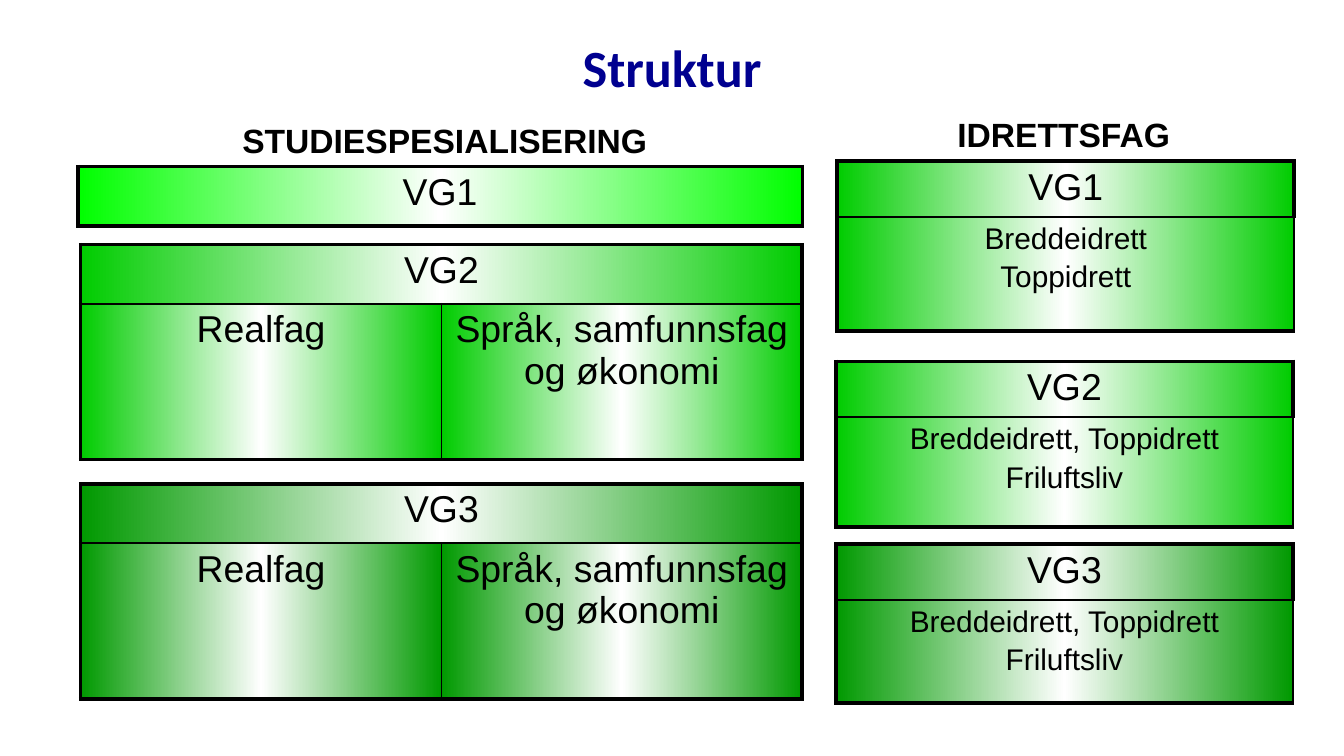
from pptx import Presentation
from pptx import util as u
from pptx.dml.color import RGBColor
from pptx.enum import text
from pptx.oxml import parse_xml
from pptx.oxml.ns import nsdecls

BLACK = RGBColor(0x00, 0x00, 0x00)
NAVY = RGBColor(0x00, 0x00, 0x90)
WHITE = RGBColor(0xFF, 0xFF, 0xFF)
LIME = RGBColor(0x00, 0xFF, 0x00)
GREEN = RGBColor(0x00, 0xCC, 0x00)
DARK_GREEN = RGBColor(0x00, 0x99, 0x00)
THICK, THIN = 2.25, 1
SUBJECTS = ["Realfag", "Språk, samfunnsfag og økonomi"]
SPORTS = ["Breddeidrett, Toppidrett\nFriluftsliv"]


def write(frame, words, size=20, font="Arial", color=BLACK, bold=False, gap=3):
    for index, line in enumerate(words.split("\n")):
        paragraph = frame.paragraphs[0] if index == 0 else frame.add_paragraph()
        paragraph.alignment = text.PP_ALIGN.CENTER
        if index:
            paragraph.space_before = u.Pt(gap)
        run = paragraph.add_run()
        run.text = line
        run.font.size = u.Pt(size)
        run.font.name = font
        run.font.bold = bold
        run.font.color.rgb = color


def add_heading(slide, box, words, wrap=False, **style):
    frame = slide.shapes.add_textbox(*map(u.Inches, box)).text_frame
    frame.word_wrap = wrap
    write(frame, words, bold=True, **style)
    return frame


def add_border(cell, side, width):
    cell._tc.get_or_add_tcPr().append(parse_xml(
        f'<a:ln{side} {nsdecls("a")} w="{u.Pt(width)}"><a:solidFill>'
        f'<a:srgbClr val="{BLACK}"/></a:solidFill></a:ln{side}>'))


def add_gradient(cell, color):
    stops = "".join(
        f'<a:gs pos="{position}"><a:srgbClr val="{shade}"/></a:gs>'
        for position, shade in ((0, color), (50000, WHITE), (100000, color)))
    cell._tc.get_or_add_tcPr().append(parse_xml(
        f'<a:gradFill {nsdecls("a")} rotWithShape="1"><a:gsLst>{stops}</a:gsLst>'
        f'<a:lin ang="0" scaled="1"/></a:gradFill>'))


def add_year(slide, box, year, color, courses=(), header=0.44, size=20):
    left, top, width, height = box
    row_count, column_count = (2 if courses else 1), max(1, len(courses))
    table = slide.shapes.add_table(
        row_count, column_count, *map(u.Inches, box)).table
    table.first_row = table.horz_banding = False
    for column in table.columns:
        column.width = u.Inches(width / column_count)
    table.rows[0].height = u.Inches(header)
    if courses:
        table.rows[1].height = u.Inches(height - header)
    if column_count > 1:
        table.cell(0, 0).merge(table.cell(0, column_count - 1))

    for row in range(row_count):
        for column in range(column_count):
            cell = table.cell(row, column)
            cell.margin_left = cell.margin_right = u.Inches(0.1)
            cell.margin_top = cell.margin_bottom = u.Inches(0.04)
            last_of_several = column == column_count - 1 > 0
            outer = {"L": column == 0, "R": row == 0 or last_of_several,
                     "T": row == 0, "B": row == row_count - 1}
            for side, is_outer in outer.items():
                add_border(cell, side, THICK if is_outer else THIN)
            add_gradient(cell, color)
            if row:
                write(cell.text_frame, courses[column], size=size)
    write(table.cell(0, 0).text_frame, year)


def add_title(slide, box):
    frame = add_heading(slide, box, "Struktur", wrap=True,
                        size=28, font="Calibri", color=NAVY)
    frame.margin_left = frame.margin_right = u.Inches(0.09)
    frame.margin_top = frame.margin_bottom = u.Inches(0.04)


def add_general_studies(slide, box):
    left, top, width = box
    add_heading(slide, (left + 1.12, top, 3.22, 0.4),
                "STUDIESPESIALISERING", size=18)
    add_year(slide, (left, top + 0.4, width, 0.44), "VG1", LIME)
    for year, offset, color in (("VG2", 0.98, GREEN), ("VG3", 2.76, DARK_GREEN)):
        add_year(slide, (left + 0.02, top + offset, width - 0.02, 1.6),
                 year, color, SUBJECTS)


def add_sports(slide, box):
    left, top, width = box
    add_heading(slide, (left + 0.8, top, 1.79, 0.4), "IDRETTSFAG", size=18)
    years = (
        ("VG1", 0.01, 0.4, 1.25, GREEN, ["Breddeidrett\nToppidrett"]),
        ("VG2", 0, 1.89, 1.22, GREEN, SPORTS),
        ("VG3", 0, 3.25, 1.17, DARK_GREEN, SPORTS),
    )
    for year, shift, offset, height, color, courses in years:
        add_year(slide, (left + shift, top + offset, width, height),
                 year, color, courses, header=0.4, size=16)


def main():
    deck = Presentation()
    deck.slide_width = u.Inches(10)
    deck.slide_height = deck.slide_width * 9 // 16
    slide = deck.slides.add_slide(deck.slide_layouts[6])
    add_title(slide, (3.79, 0.22, 2.42, 0.56))
    add_general_studies(slide, (0.58, 0.84, 5.39))
    add_sports(slide, (6.22, 0.8, 3.4))
    deck.save("out.pptx")


if __name__ == "__main__":
    main()
